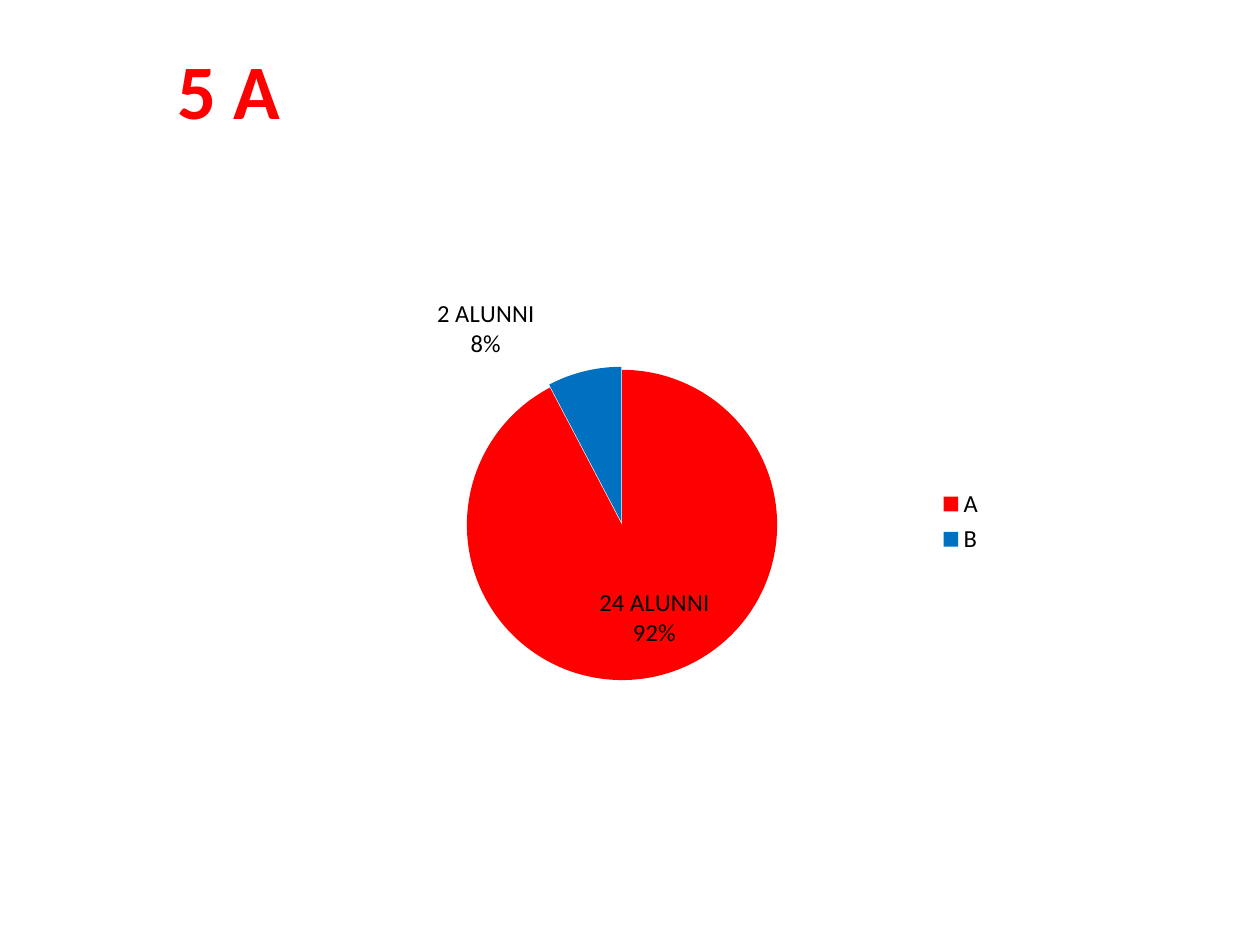
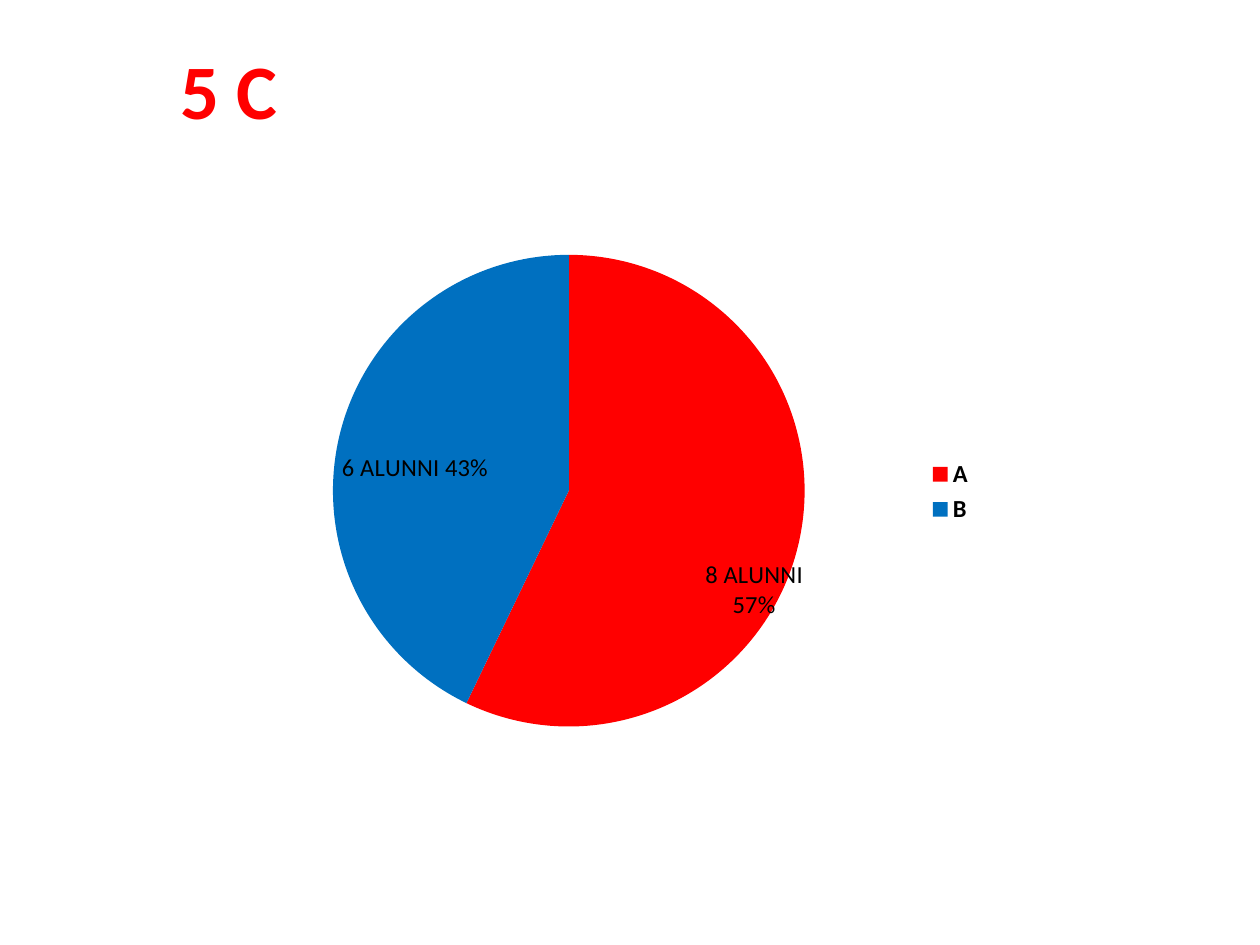
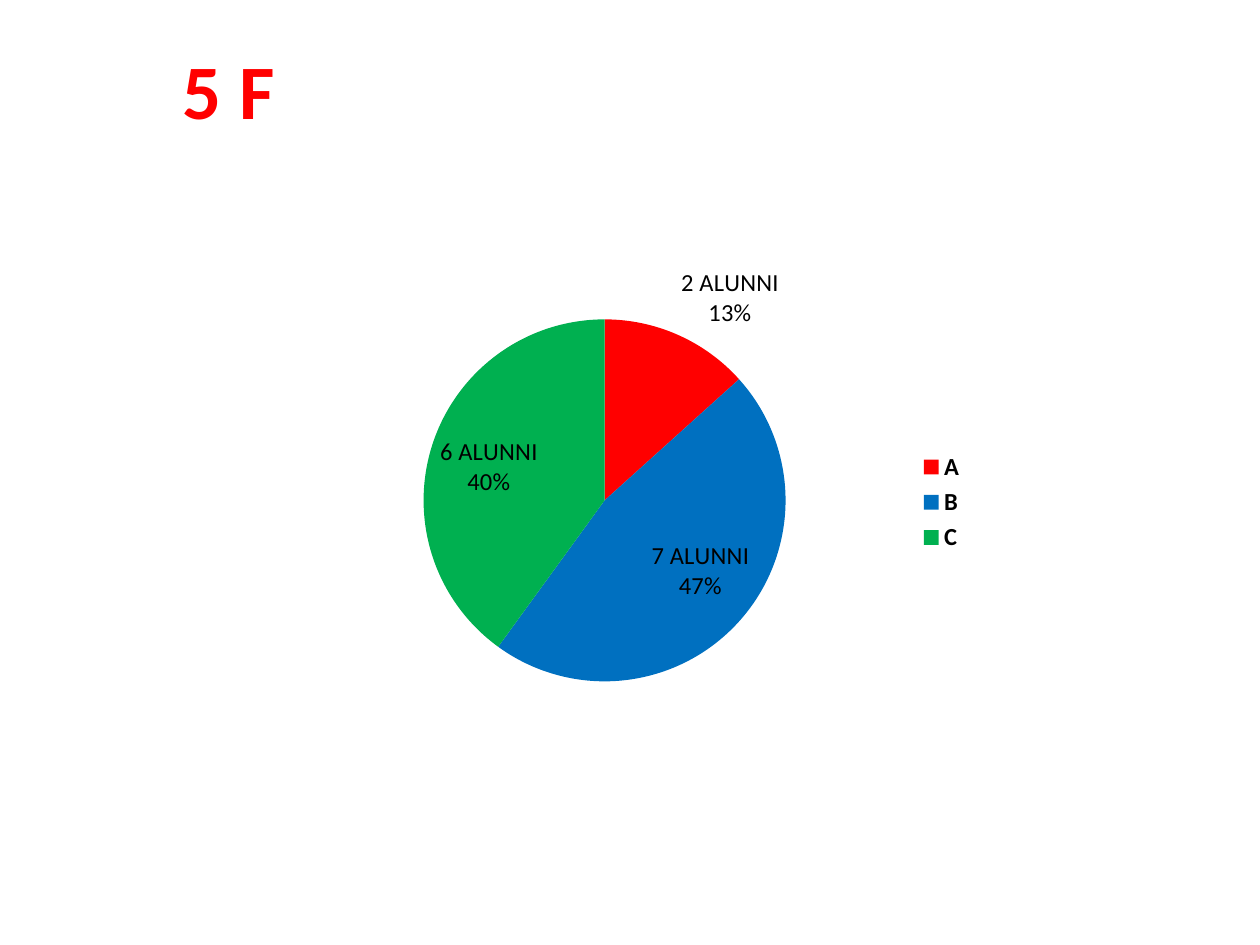
from lxml import etree
from pptx import Presentation
from pptx.chart.data import CategoryChartData
from pptx.dml.color import RGBColor
from pptx.enum.chart import XL_CHART_TYPE, XL_LABEL_POSITION, XL_LEGEND_POSITION
from pptx.enum.text import MSO_AUTO_SIZE, PP_ALIGN
from pptx.oxml.ns import qn
from pptx.util import Inches, Pt

PIE = XL_CHART_TYPE.PIE
FIT = XL_LABEL_POSITION.BEST_FIT
RIGHT = XL_LEGEND_POSITION.RIGHT
CENTER = PP_ALIGN.CENTER
GROW = MSO_AUTO_SIZE.SHAPE_TO_FIT_TEXT

WIDE, HIGH = 10, 7.5
FONT = "Calibri"
BLACK = "000000"
RED = "FF0000"
HUES = [RED, "0070C0", "00B050"]
HEAD = (0.083, 0.039, 0.197, 0.112)
BIG = {"name": FONT, "size": Pt(44), "bold": True}
BASE = {"name": FONT, "size": Pt(10)}
LABEL = {"name": FONT, "size": Pt(14), "bold": False}
STRONG = {**LABEL, "bold": True}

GROUPS = [
    {
        "title": "5 A",
        "box": (0.25, 0.3, 0.541, 0.504),
        "pie": (0.22, 0.175, 0.46),
        "values": [24, 2],
        "labels": ["24 ALUNNI\n92%", "2 ALUNNI\n8%"],
        "shifts": {1: (-0.07, -0.01)},
        "legend": LABEL,
        "burst": 1,
    },
    {
        "title": "5 C",
        "box": (0.169, 0.248, 0.614, 0.545),
        "pie": (0.155, 0.04, 0.61),
        "values": [8, 6],
        "labels": ["8 ALUNNI\n57%", "6 ALUNNI 43%"],
        "shifts": {0: (-0.13, 0.03)},
        "legend": STRONG,
        "burst": 0,
    },
    {
        "title": "5 F",
        "box": (0.201, 0.259, 0.575, 0.545),
        "pie": (0.235, 0.145, 0.5),
        "values": [2, 7, 6],
        "labels": ["2 ALUNNI\n13%", "7 ALUNNI\n47%", "6 ALUNNI\n40%"],
        "shifts": {},
        "legend": STRONG,
        "burst": 0,
    },
]


def paint(hue):
    return RGBColor.from_string(hue)


def place(box):
    return [Inches(part * side) for part, side in zip(box, (WIDE, HIGH) * 2)]


def style(font, looks, hue=BLACK):
    for name, value in looks.items():
        setattr(font, name, value)
    font.color.rgb = paint(hue)


def layout(**marks):
    root = etree.Element(qn("c:layout"))
    manual = etree.SubElement(root, qn("c:manualLayout"))
    for name, value in marks.items():
        etree.SubElement(manual, qn("c:" + name), val=str(value))
    return root


def add_title(slide, text, box):
    frame = slide.shapes.add_textbox(*place(box)).text_frame
    frame.word_wrap = True
    frame.auto_size = GROW
    line = frame.paragraphs[0]
    line.alignment = CENTER
    run = line.add_run()
    run.text = text
    style(run.font, BIG, RED)


def set_plot(chart, box, pie):
    left, top, width = pie
    height = round(width * box[2] * WIDE / (box[3] * HIGH), 3)
    area = chart.plots[0]._element.getparent()
    for old in area.findall(qn("c:layout")):
        area.remove(old)
    area.insert(0, layout(layoutTarget="inner", xMode="edge", yMode="edge",
                          x=left, y=top, w=width, h=height))


def set_labels(series, labels, shifts):
    marks = series.data_labels
    marks.show_value = marks.show_percentage = True
    marks.position = FIT
    style(marks.font, STRONG)
    for spot, text in enumerate(labels):
        point = series.points[spot]
        fill = point.format.fill
        fill.solid()
        fill.fore_color.rgb = paint(HUES[spot])
        label = point.data_label
        frame = label.text_frame
        frame.text = text
        for line in frame.paragraphs:
            for run in line.runs:
                style(run.font, LABEL)
        label.position = FIT
    root = series._element
    for spot, node in enumerate(root.findall(".//" + qn("c:dLbl"))):
        if spot in shifts:
            across, down = shifts[spot]
            node.insert(1, layout(x=across, y=down))
    for node in root.iter(qn("c:showLeaderLines")):
        node.set("val", "0")


def add_pie(slide, group):
    box, values = group["box"], group["values"]
    data = CategoryChartData()
    data.categories = list("ABC"[:len(values)])
    data.add_series("Series 1", values)
    chart = slide.shapes.add_chart(PIE, *place(box), data).chart
    chart.has_title = False
    style(chart.font, BASE)
    chart.has_legend = True
    legend = chart.legend
    legend.position = RIGHT
    legend.include_in_layout = False
    style(legend.font, group["legend"])
    plot = chart.plots[0]
    plot.vary_by_categories = True
    series = plot.series[0]
    set_labels(series, group["labels"], group["shifts"])
    set_plot(chart, box, group["pie"])
    if group["burst"]:
        burst = etree.Element(qn("c:explosion"), val=str(group["burst"]))
        series._element.find(qn("c:dPt")).addprevious(burst)


def main():
    deck = Presentation()
    deck.slide_width, deck.slide_height = Inches(WIDE), Inches(HIGH)
    for group in GROUPS:
        slide = deck.slides.add_slide(deck.slide_layouts[6])
        add_title(slide, group["title"], HEAD)
        add_pie(slide, group)
    deck.save("out.pptx")


if __name__ == "__main__":
    main()
